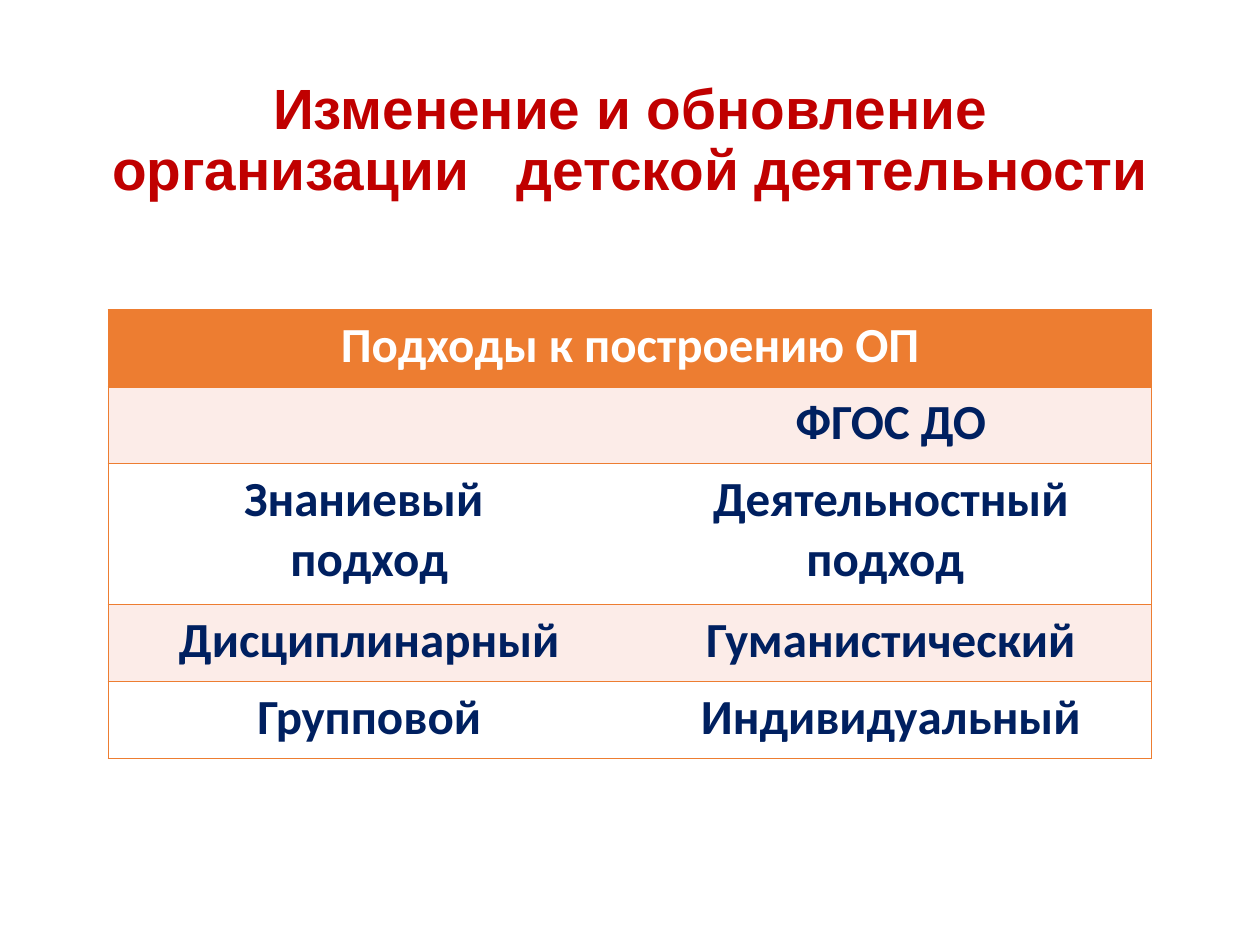
from dataclasses import dataclass

from lxml import etree
from pptx import Presentation
from pptx.dml.color import RGBColor
from pptx.enum.text import MSO_ANCHOR, PP_ALIGN
from pptx.oxml.ns import qn
from pptx.util import Inches, Pt

CENTER = PP_ALIGN.CENTER
MIDDLE = MSO_ANCHOR.MIDDLE
COLORS = {
    "title": "C00000",
    "accent": "ED7D31",
    "band": "FCECE8",
    "white": "FFFFFF",
    "navy": "002060",
}
PLAIN_TABLE_STYLE = "{2D5ABB26-0587-4C30-8999-92F81FD0307C}"
TITLE_PARTS = ("Изменение и обновление организации", " ", "детской деятельности")
TITLE_GAP_SPACING = "1800"


@dataclass
class ApproachRow:
    texts: tuple[str, str]
    fill: str
    color: str = "navy"
    height: float = 0.61


ROWS = [
    ApproachRow(("Подходы к построению ОП", ""), "accent", "white"),
    ApproachRow(("", "ФГОС ДО"), "band"),
    ApproachRow(("Знаниевый \nподход", "Деятельностный подход "), "white", height=1.12),
    ApproachRow(("Дисциплинарный", "Гуманистический"), "band"),
    ApproachRow(("Групповой", "Индивидуальный"), "white"),
]


def style_font(font, name: str, size: float, color: str) -> None:
    font.name = name
    font.size = Pt(size)
    font.bold = True
    font.color.rgb = RGBColor.from_string(COLORS[color])


def add_title(page) -> None:
    box = page.shapes.add_textbox(Inches(0.69), Inches(0.4), Inches(8.62), Inches(1.45))
    frame = box.text_frame
    frame.word_wrap = True
    frame.vertical_anchor = MIDDLE
    para = frame.paragraphs[0]
    para.alignment = CENTER
    para.line_spacing = 0.9
    for part in TITLE_PARTS:
        span = para.add_run()
        span.text = part
        style_font(span.font, "Arial", 32.4, "title")
        if part == " ":
            span.font._element.set("spc", TITLE_GAP_SPACING)


def add_borders(cell, sides: tuple[str, ...]) -> None:
    properties = cell._tc.get_or_add_tcPr()
    for side in sides:
        line = etree.SubElement(properties, qn(f"a:ln{side}"), w=str(Pt(1)))
        fill = etree.SubElement(line, qn("a:solidFill"))
        etree.SubElement(fill, qn("a:srgbClr"), val=COLORS["accent"])


def fill_cell(cell, text: str, row: ApproachRow, sides: tuple[str, ...]) -> None:
    add_borders(cell, sides)
    cell.fill.solid()
    cell.fill.fore_color.rgb = RGBColor.from_string(COLORS[row.fill])
    cell.text_frame.text = text
    for para in cell.text_frame.paragraphs:
        para.alignment = CENTER
        for span in para.runs:
            style_font(span.font, "Calibri", 28, row.color)


def add_approach_table(page) -> None:
    height = sum(row.height for row in ROWS)
    frame = page.shapes.add_table(
        len(ROWS), 2, Inches(0.86), Inches(2.46), Inches(8.28), Inches(height)
    )
    table = frame.table
    table._tbl.tblPr.find(qn("a:tableStyleId")).text = PLAIN_TABLE_STYLE
    for index, row in enumerate(ROWS):
        table.rows[index].height = Inches(row.height)
        for column, outer_side in enumerate("LR"):
            cell = table.cell(index, column)
            fill_cell(cell, row.texts[column], row, (outer_side, "T", "B"))
    table.cell(0, 0).merge(table.cell(0, 1))


def main() -> None:
    """Build the slide comparing approaches to the educational programme."""
    deck = Presentation()
    deck.slide_width = Inches(10)
    deck.slide_height = Inches(7.5)
    page = deck.slides.add_slide(deck.slide_layouts[6])
    add_title(page)
    add_approach_table(page)
    deck.save("out.pptx")


if __name__ == "__main__":
    main()
